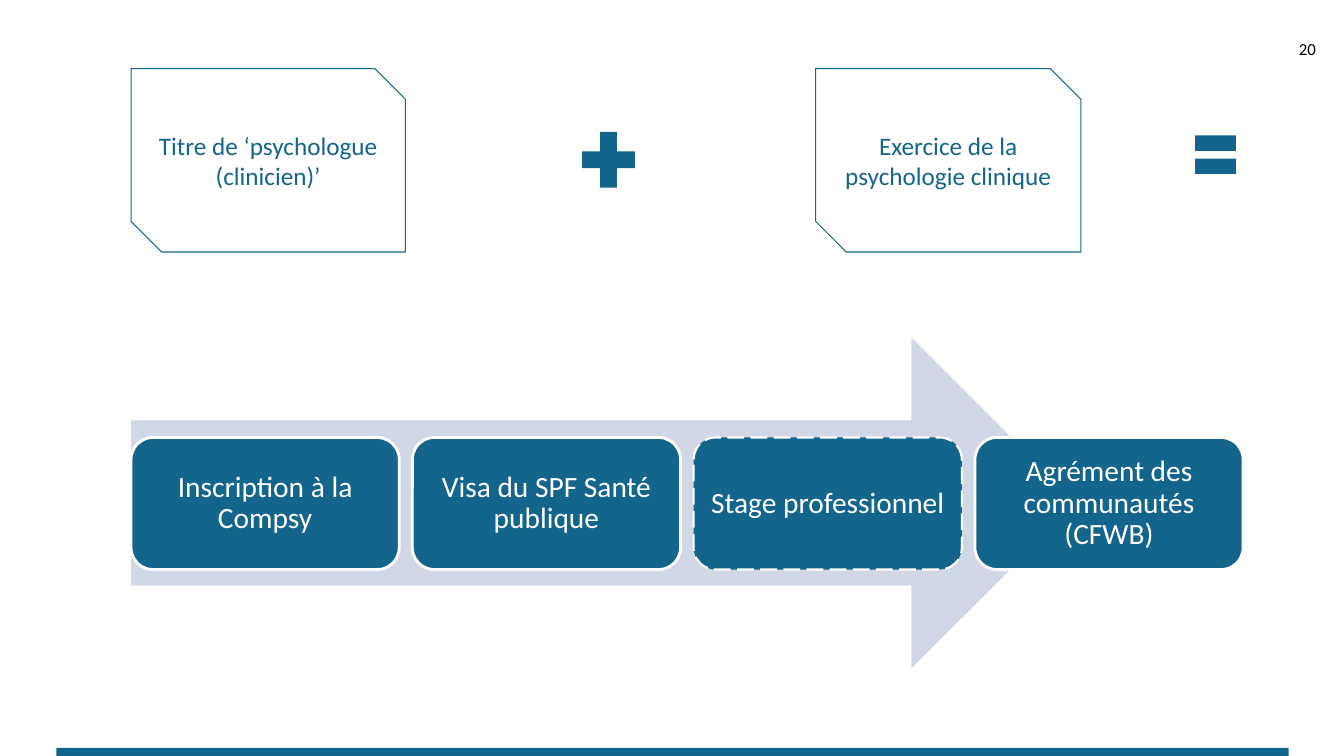
from pptx import Presentation
from pptx.dml.color import RGBColor
from pptx.enum.dml import MSO_LINE
from pptx.enum.shapes import MSO_SHAPE as SHAPE
from pptx.enum.text import MSO_ANCHOR as ANCHOR, PP_ALIGN as ALIGN
from pptx.util import Inches, Pt

BLUE, PALE, WHITE, BLACK = "14658C", "D0D8E8", "FFFFFF", "000000"


def rgb(value):
    return RGBColor.from_string(value)


def write(sp, text, size=18, color=BLUE, align=ALIGN.CENTER, spacing=None, inset=None):
    tf = sp.text_frame
    tf.word_wrap = True
    tf.vertical_anchor = ANCHOR.MIDDLE
    if inset is not None:
        tf.margin_left = tf.margin_right = Inches(inset)
        tf.margin_top = tf.margin_bottom = Inches(inset)
    p = tf.paragraphs[0]
    p.alignment = align
    if spacing:
        p.line_spacing = spacing
    r = p.add_run()
    r.text = text
    r.font.name = "Calibri"
    r.font.size = Pt(size)
    r.font.color.rgb = rgb(color)


class SlideBuilder:
    def __init__(self, slide):
        self.shapes = slide.shapes

    def shape(self, kind, x, y, w, h, fill=None, line=None, width=1, dash=None):
        sp = self.shapes.add_shape(kind, Inches(x), Inches(y), Inches(w), Inches(h))
        sp.shadow.inherit = False
        if fill:
            sp.fill.solid()
            sp.fill.fore_color.rgb = rgb(fill)
        else:
            sp.fill.background()
        if line:
            sp.line.color.rgb = rgb(line)
            sp.line.width = Pt(width)
            if dash:
                sp.line.dash_style = dash
        else:
            sp.line.fill.background()
        return sp

    def condition(self, x, w, text):
        sp = self.shape(SHAPE.SNIP_2_DIAG_RECTANGLE, x, 0.68, w, 1.82, line=BLUE, width=0.75)
        write(sp, text)

    def step(self, x, text, width=2, dash=None):
        sp = self.shape(SHAPE.ROUNDED_RECTANGLE, x, 4.34, 2.66, 1.31, BLUE, WHITE, width, dash)
        write(sp, text, size=21, color=WHITE, spacing=0.9, inset=0.09)

    def label(self, x, y, w, h, text, **fmt):
        write(self.shapes.add_textbox(Inches(x), Inches(y), Inches(w), Inches(h)), text, **fmt)


def main():
    prs = Presentation()
    prs.slide_width, prs.slide_height = Inches(13.33), Inches(7.5)
    s = SlideBuilder(prs.slides.add_slide(prs.slide_layouts[6]))

    # Footer bar
    s.shape(SHAPE.RECTANGLE, 0.56, 7.42, 12.22, 0.08, BLUE)

    # Title plus practice equals the process below
    s.shape(SHAPE.MATH_PLUS, 5.68, 1.21, 0.71, 0.75, BLUE)
    s.shape(SHAPE.MATH_EQUAL, 11.78, 1.21, 0.55, 0.65, BLUE)
    s.condition(1.3, 2.72, "Titre de ‘psychologue (clinicien)’")
    s.condition(8.09, 2.63, "Exercice de la psychologie clinique")

    # Process arrow with its four steps
    s.shape(SHAPE.RIGHT_ARROW, 1.3, 3.35, 9.38, 3.28, PALE)
    steps = [
        ("Inscription à la Compsy", {}),
        ("Visa du SPF Santé publique", {}),
        ("Stage professionnel", {"width": 1.5, "dash": MSO_LINE.LONG_DASH}),
        ("Agrément des communautés (CFWB)", {}),
    ]
    for i, (text, outline) in enumerate(steps):
        s.step(1.3 + 2.79 * i, text, **outline)

    # Page number
    s.label(12.4, 0.28, 0.75, 0.4, "20", size=12, color=BLACK, align=ALIGN.RIGHT)

    prs.save("out.pptx")


if __name__ == "__main__":
    main()
